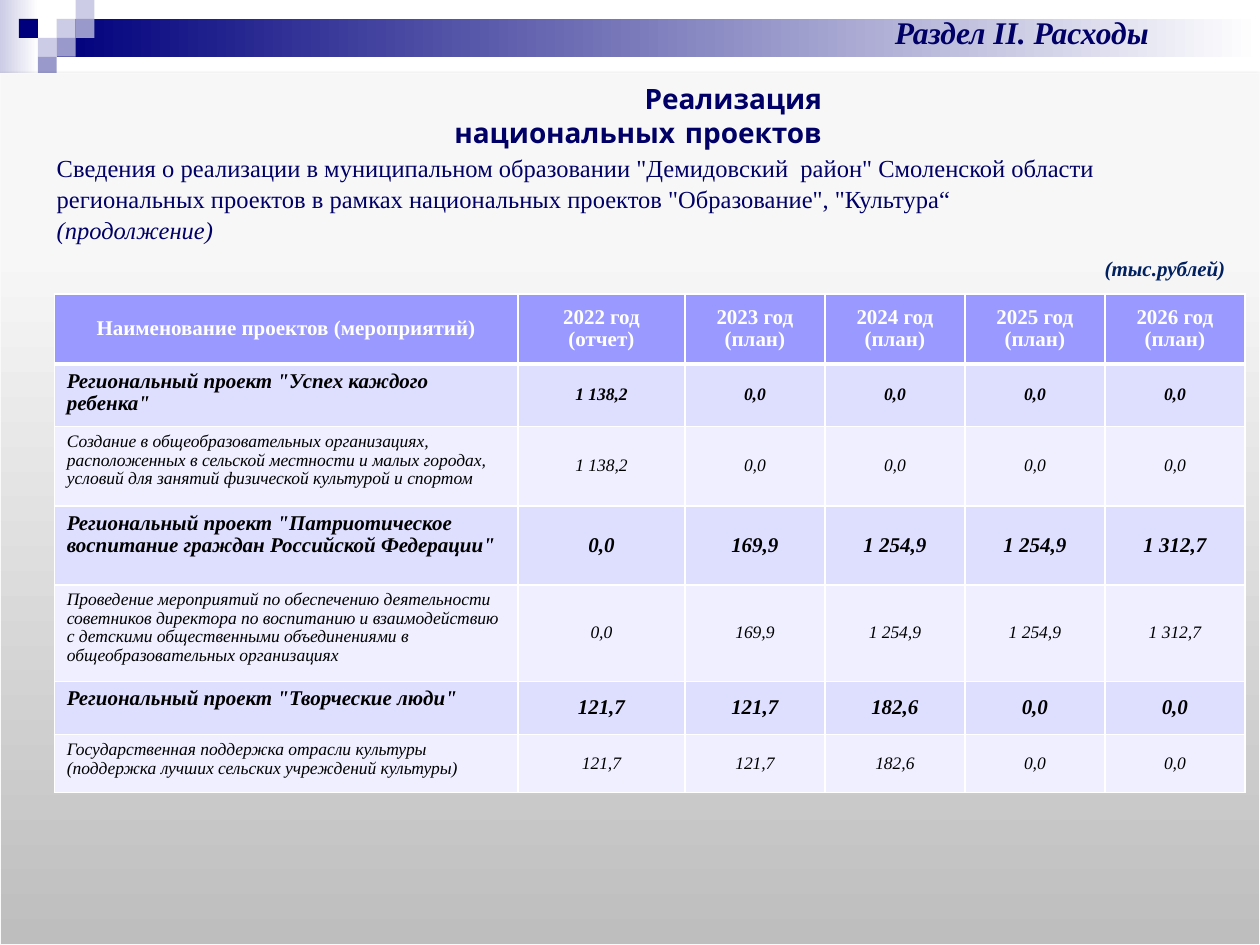
from lxml import etree
from pptx import Presentation
from pptx import util as u
from pptx.dml import color
from pptx.enum import shapes, text
from pptx.oxml import ns

THEME = {
    "serif": "Times New Roman", "heading": "Comic Neue",
    "navy": "000066", "unit": "002060", "black": "000000", "white": "FFFFFF",
    "header": "9999FF", "project": "DEDEFF", "measure": "EFEFFF",
    "dark": "00007D", "mid": "9999CC", "pale": "CCCCE6", "edge": "F9F9F9",
    "section_size": 18, "title_size": 16, "body_size": 14, "large": 12, "small": 10,
}

SECTION = "Раздел II. Расходы"
TITLE = "Реализация национальных проектов"
INTRO = ('Сведения о реализации в муниципальном образовании "Демидовский  район" Смоленской области '
         'региональных проектов в рамках национальных проектов "Образование", "Культура“')
CONTINUED = "(продолжение)"
UNIT = "(тыс.рублей)"

HEADERS = ["Наименование проектов (мероприятий)", "2022 год\n(отчет)", "2023 год\n(план)",
           "2024 год\n(план)", "2025 год\n(план)", "2026 год (план)"]
ROWS = [
    ("project", "small", ['Региональный проект "Успех каждого ребенка"',
                          "1 138,2", "0,0", "0,0", "0,0", "0,0"]),
    ("measure", "small", ["Создание в общеобразовательных организациях, расположенных в сельской "
                          "местности и малых городах, условий для занятий физической культурой и спортом",
                          "1 138,2", "0,0", "0,0", "0,0", "0,0"]),
    ("project", "large", ['Региональный проект "Патриотическое воспитание граждан Российской Федерации"',
                          "0,0", "169,9", "1 254,9", "1 254,9", "1 312,7"]),
    ("measure", "small", ["Проведение мероприятий по обеспечению деятельности советников директора "
                          "по воспитанию и взаимодействию с детскими общественными объединениями "
                          "в общеобразовательных организациях",
                          "0,0", "169,9", "1 254,9", "1 254,9", "1 312,7"]),
    ("project", "large", ['Региональный проект "Творческие люди"',
                          "121,7", "121,7", "182,6", "0,0", "0,0"]),
    ("measure", "small", ["Государственная поддержка отрасли культуры "
                          "(поддержка лучших сельских учреждений культуры)",
                          "121,7", "121,7", "182,6", "0,0", "0,0"]),
]
COLUMN_WIDTHS = [265, 95.4, 80, 80, 80, 80]
ROW_HEIGHTS = [40, 35.7, 45.4, 45.1, 55.4, 30.3, 33.1]

SQUARE = 10.8
MOSAIC = [(3, 1, "pale"), (4, 0, "pale"), (4, 1, "mid"), (2, 2, "pale"),
          (1, 1, "dark"), (3, 2, "mid"), (2, 3, "mid")]

LEFT, CENTER, RIGHT = text.PP_ALIGN.LEFT, text.PP_ALIGN.CENTER, text.PP_ALIGN.RIGHT


def rgb(name):
    return color.RGBColor.from_string(THEME[name])


def add_xml(parent, tag, **attributes):
    return etree.SubElement(parent, ns.qn(tag), {key: str(value) for key, value in attributes.items()})


def write(frame, content, size="large", font="serif", ink="navy", bold=False, italic=False,
          align=LEFT, spacing=None, new_line=False):
    for index, line in enumerate(content.split("\n")):
        paragraph = frame.add_paragraph() if index else frame.paragraphs[-1]
        paragraph.alignment = align
        paragraph.space_before = u.Pt(0)
        if spacing:
            paragraph.line_spacing = spacing
        if new_line:
            paragraph.add_line_break()
        run = paragraph.add_run()
        run.text = line
        run.font.name = THEME[font]
        run.font.size = u.Pt(THEME[size])
        run.font.color.rgb = rgb(ink)
        run.font.bold, run.font.italic = bold, italic


def place(shape, left, top, width, height):
    shape.left, shape.top, shape.width, shape.height = map(u.Pt, (left, top, width, height))


def prepare_frame(shape, wrap=True):
    frame = shape.text_frame
    frame.word_wrap = wrap
    frame.auto_size = text.MSO_AUTO_SIZE.NONE
    frame.vertical_anchor = text.MSO_ANCHOR.TOP
    return frame


def add_block(slide, box, fill=None, stops=None, angle=0, kind=shapes.MSO_SHAPE.RECTANGLE):
    shape = slide.shapes.add_shape(kind, *map(u.Pt, box))
    shape.line.fill.background()
    shape.shadow.inherit = False
    if fill:
        shape.fill.solid()
        shape.fill.fore_color.rgb = rgb(fill)
    else:
        shape.fill.gradient()
        gradient = shape._element.spPr.find(ns.qn("a:gradFill"))
        for child in list(gradient):
            gradient.remove(child)
        stop_list = add_xml(gradient, "a:gsLst")
        for position, value in stops:
            stop = add_xml(stop_list, "a:gs", pos=position * 1000)
            add_xml(stop, "a:srgbClr", val=value)
        add_xml(gradient, "a:lin", ang=angle * 60000, scaled=0)
    return shape


def draw_backdrop(slide):
    for box, start in [((0, 0, 22, 42), "pale"), ((32.4, SQUARE, 687.6, 2 * SQUARE), "dark")]:
        add_block(slide, box, stops=[(0, THEME[start]), (100, THEME["white"])])
    for column, row, fill in MOSAIC:
        add_block(slide, (column * SQUARE, row * SQUARE, SQUARE, SQUARE), fill)
    panel = add_block(slide, (0, 42, 720, 497.5), angle=270, kind=shapes.MSO_SHAPE.FLOWCHART_PROCESS,
                      stops=[(0, "BEBEBE"), (80, "F7F7F7"), (100, "F8F8F8")])
    panel.line.color.rgb = rgb("edge")
    panel.line.width = u.Pt(0.75)
    effects = panel._element.spPr.find(ns.qn("a:effectLst"))
    shadow = add_xml(effects, "a:outerShdw", blurRad=u.Pt(3.1), dist=u.Pt(1.8), dir=5400000, rotWithShape=0)
    add_xml(add_xml(shadow, "a:srgbClr", val=THEME["black"]), "a:alpha", val=35000)


def fill_cell(cell, content, fill, top=1, bottom=1, middle=True, **style):
    properties = cell._tc.get_or_add_tcPr()
    for side, width in [("L", 1), ("R", 1), ("T", top), ("B", bottom)]:
        line = add_xml(properties, "a:ln" + side, w=u.Pt(width))
        add_xml(add_xml(line, "a:solidFill"), "a:srgbClr", val=THEME["white"])
    cell.fill.solid()
    cell.fill.fore_color.rgb = rgb(fill)
    cell.vertical_anchor = text.MSO_ANCHOR.MIDDLE if middle else text.MSO_ANCHOR.TOP
    write(cell.text_frame, content, spacing=0.96, **style)


def draw_table(slide):
    box = (31, 168, sum(COLUMN_WIDTHS), sum(ROW_HEIGHTS))
    table = slide.shapes.add_table(len(ROW_HEIGHTS), len(COLUMN_WIDTHS), *map(u.Pt, box)).table
    for column, width in zip(table.columns, COLUMN_WIDTHS):
        column.width = u.Pt(width)
    for row, height in zip(table.rows, ROW_HEIGHTS):
        row.height = u.Pt(height)
    for column, content in enumerate(HEADERS):
        fill_cell(table.cell(0, column), content, "header", bottom=3, ink="white", bold=True, align=CENTER)
    for row, (kind, value_size, contents) in enumerate(ROWS, 1):
        is_project = kind == "project"
        name_size = "large" if is_project else "small"
        for column, content in enumerate(contents):
            fill_cell(table.cell(row, column), content, kind, top=3 if row == 1 else 1,
                      middle=column > 0, size=value_size if column else name_size,
                      ink="black", bold=is_project, italic=True, align=CENTER if column else LEFT)


def main():
    presentation = Presentation()
    presentation.slide_width, presentation.slide_height = u.Pt(720), u.Pt(540)
    slide = presentation.slides.add_slide(presentation.slide_layouts[1])
    title, body = slide.placeholders
    draw_backdrop(slide)
    for placeholder in (title, body):
        slide.shapes._spTree.append(placeholder._element)

    section = slide.shapes.add_textbox(*map(u.Pt, (450.7, 3.6, 266.4, 29)))
    write(prepare_frame(section), SECTION, "section_size", bold=True, italic=True, align=CENTER)

    place(title, 241, 43.2, 236, 44)
    write(prepare_frame(title), TITLE, "title_size", "heading", bold=True, align=RIGHT)

    place(body, 25.2, 83, 684, 58)
    frame = prepare_frame(body)
    write(frame, INTRO, "body_size", spacing=1.05)
    write(frame, CONTINUED, "body_size", italic=True, new_line=True)
    properties = frame.paragraphs[0]._p.get_or_add_pPr()
    properties.set("marL", "0")
    properties.set("indent", "0")
    add_xml(properties, "a:buNone")

    draw_table(slide)
    unit = slide.shapes.add_textbox(*map(u.Pt, (624.2, 142.6, 84.2, 21.6)))
    write(prepare_frame(unit, wrap=False), UNIT, ink="unit", bold=True, italic=True)
    presentation.save("out.pptx")


if __name__ == "__main__":
    main()
